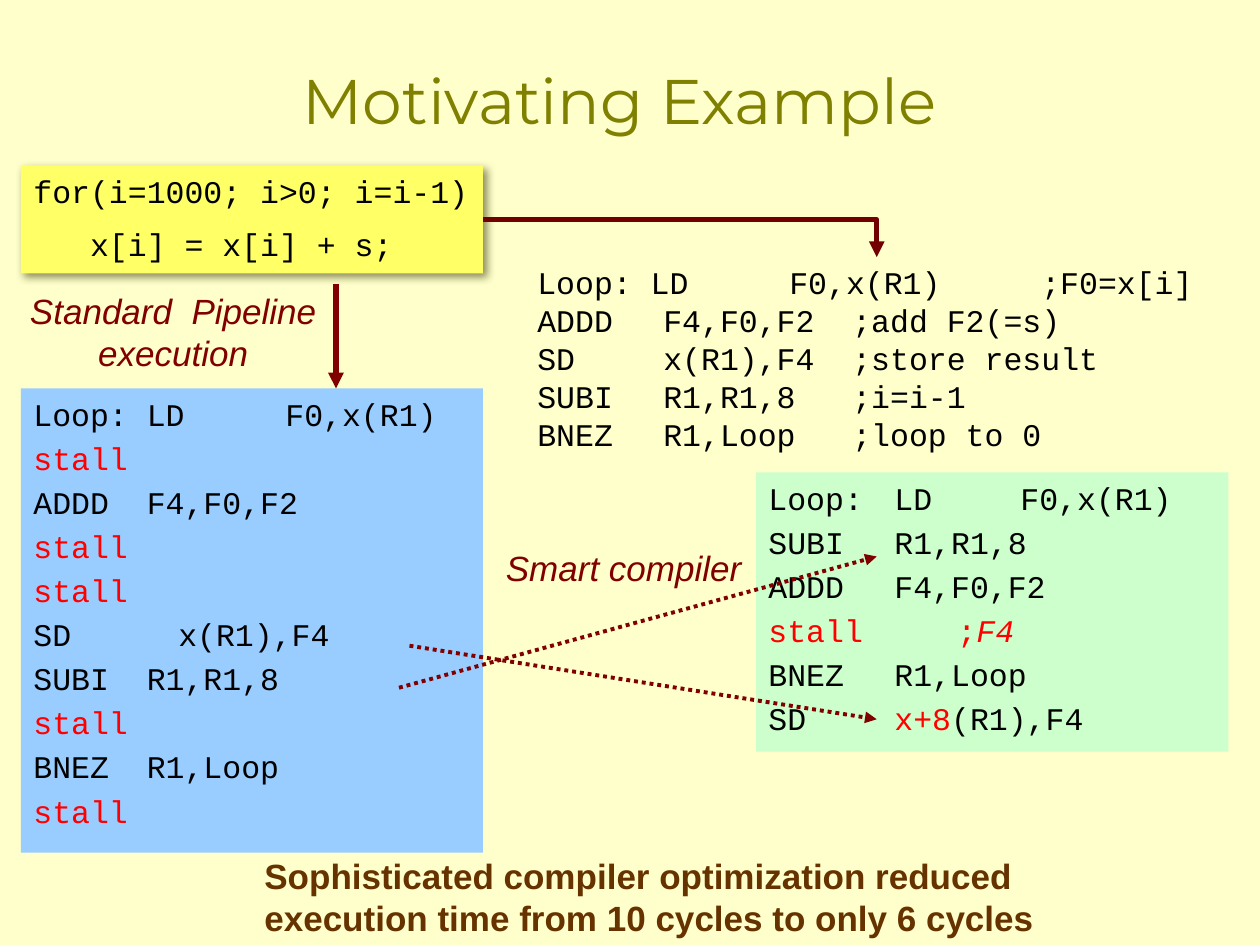
from lxml import etree
from pptx import Presentation
from pptx import util as u
from pptx.dml.color import RGBColor
from pptx.enum import dml, shapes, text
from pptx.oxml.ns import qn

THEME = {
    "page": "FFFFCC", "title": "808000", "ink": "000000", "stall": "FF0000",
    "accent": "800000", "bend": "730000", "closing": "663300",
    "source": "FFFF66", "standard": "99CCFF", "smart": "CCFFCC",
    "shadow": "666633",
    "code_font": "Courier New", "label_font": "Arial", "title_font": "Montserrat",
    "title_size": 36, "code_size": 18, "label_size": 20,
}
COLS, ROWS = 120, 90
TAB_STOPS = (1, 2, 3, 4)

CODE = {"name": THEME["code_font"], "size": THEME["code_size"], "color": THEME["ink"]}
LABEL = {"name": THEME["label_font"], "size": THEME["label_size"],
         "color": THEME["accent"], "italic": True}
CLOSING = {**LABEL, "color": THEME["closing"], "italic": False, "bold": True}
TITLE = {"name": THEME["title_font"], "size": THEME["title_size"], "color": THEME["title"]}
RED = {"color": THEME["stall"]}
STALL = [("stall", RED)]

TITLE_TEXT, TITLE_AT = "Motivating Example", (7, 2, 104, 15)

SOURCE = ["for(i=1000; i>0; i=i-1)", "   x[i] = x[i] + s;"]
ASSEMBLY = [
    "Loop: LD\tF0,x(R1)\t;F0=x[i]",
    "ADDD\tF4,F0,F2  ;add F2(=s)",
    "SD\tx(R1),F4  ;store result",
    "SUBI\tR1,R1,8   ;i=i-1",
    "BNEZ\tR1,Loop   ;loop to 0",
]
STANDARD = [
    "Loop: LD\tF0,x(R1)", STALL, "ADDD  F4,F0,F2", STALL, STALL,
    "SD\t x(R1),F4", "SUBI  R1,R1,8", STALL, "BNEZ  R1,Loop", STALL,
]
SMART = [
    "Loop:\tLD\tF0,x(R1)", "SUBI\tR1,R1,8", "ADDD\tF4,F0,F2",
    [("stall     ;", RED), ("F4", {**RED, "italic": True})],
    "BNEZ\tR1,Loop",
    [("SD\t", {}), ("x+8", RED), ("(R1),F4", {})],
]

BOXES = [
    {"at": (2, 15.75, 44, 10.3), "lines": SOURCE, "style": CODE, "gap": 0.5,
     "fill": THEME["source"], "shadow": True},
    {"at": (0, 27, 33, 9.2), "lines": ["Standard  Pipeline execution"],
     "style": LABEL, "gap": 0.5, "align": text.PP_ALIGN.CENTER},
    {"at": (24, 80.8, 77, 9.2), "style": CLOSING, "gap": 0.5,
     "lines": ["Sophisticated compiler optimization reduced "
               "execution time from 10 cycles to only 6 cycles"]},
    {"at": (50, 24.5, 67, 23), "lines": ASSEMBLY, "style": CODE, "gap": 0},
    {"at": (2, 37, 44, 44.2), "lines": STANDARD, "style": CODE, "gap": 0.2,
     "fill": THEME["standard"]},
    {"at": (72, 45, 45, 26.6), "lines": SMART, "style": CODE, "gap": 0.2,
     "fill": THEME["smart"]},
    {"at": (47, 51.5, 25, 5.2), "lines": ["Smart compiler"], "style": LABEL, "gap": 0.5},
]

SOLID = {"color": THEME["accent"], "width": 3}
DOTTED = {"color": THEME["accent"], "width": 2.25, "dash": dml.MSO_LINE.ROUND_DOT}
BENT = {"color": THEME["bend"], "width": 3, "bent": True}
ARROWS = [
    ((32, 27, 32, 37), SOLID),
    ((46, 20.9, 83.5, 24.5), BENT),
    ((38, 65.5, 83.5, 53), DOTTED),
    ((39, 61.5, 83.5, 68.5), DOTTED),
]

prs = Presentation()
prs.slide_width, prs.slide_height = u.Inches(10), u.Inches(7.5)


def place(at):
    steps = (prs.slide_width / COLS, prs.slide_height / ROWS) * 2
    return [round(value * step) for value, step in zip(at, steps)]


def rgb(value):
    return RGBColor.from_string(value)


def style_font(font, style):
    for key, value in style.items():
        if key == "color":
            font.color.rgb = rgb(value)
        else:
            setattr(font, key, u.Pt(value) if key == "size" else value)


def add_tabs(p):
    tabs = etree.SubElement(p._p.get_or_add_pPr(), qn("a:tabLst"))
    for stop in TAB_STOPS:
        etree.SubElement(tabs, qn("a:tab"), pos=str(u.Inches(stop)), algn="l")


def add_shadow(sp):
    effects = sp._element.spPr.find(qn("a:effectLst"))
    shadow = etree.SubElement(effects, qn("a:outerShdw"), blurRad=str(u.Pt(5)),
                              dist=str(u.Pt(3)), dir="2700000", algn="ctr", rotWithShape="0")
    color = etree.SubElement(shadow, qn("a:srgbClr"), val=THEME["shadow"])
    etree.SubElement(color, qn("a:alpha"), val="75000")


def add_box(s, at, lines, style, gap, fill=None, shadow=False, align=text.PP_ALIGN.LEFT):
    if fill:
        sp = s.shapes.add_shape(shapes.MSO_SHAPE.RECTANGLE, *place(at))
        sp.shadow.inherit = False
        sp.fill.solid()
        sp.fill.fore_color.rgb = rgb(fill)
        sp.line.fill.background()
    else:
        sp = s.shapes.add_textbox(*place(at))
    if shadow:
        add_shadow(sp)
    tf = sp.text_frame
    for key, value in {"word_wrap": True, "vertical_anchor": text.MSO_ANCHOR.TOP,
                       "auto_size": text.MSO_AUTO_SIZE.SHAPE_TO_FIT_TEXT}.items():
        setattr(tf, key, value)
    for i, line in enumerate(lines):
        p = tf.add_paragraph() if i else tf.paragraphs[0]
        p.alignment = align
        p.space_before = u.Pt(gap * style["size"])
        if style is CODE:
            add_tabs(p)
        for words, extra in [(line, {})] if isinstance(line, str) else line:
            r = p.add_run()
            r.text = words
            style_font(r.font, {**style, **extra})


def add_arrow(s, ends, color, width, dash=None, bent=False):
    kind = shapes.MSO_CONNECTOR.ELBOW if bent else shapes.MSO_CONNECTOR.STRAIGHT
    c = s.shapes.add_connector(kind, *place(ends))
    c.line.color.rgb = rgb(color)
    c.line.width = u.Pt(width)
    if dash:
        c.line.dash_style = dash
    spPr = c._element.spPr
    if bent:
        spPr.find(qn("a:prstGeom")).set("prst", "bentConnector2")
    etree.SubElement(c.line._get_or_add_ln(), qn("a:tailEnd"), type="triangle")
    etree.SubElement(spPr, qn("a:effectLst"))


def main():
    s = prs.slides.add_slide(prs.slide_layouts[5])
    s.background.fill.solid()
    s.background.fill.fore_color.rgb = rgb(THEME["page"])
    title = s.shapes.title
    title.left, title.top, title.width, title.height = place(TITLE_AT)
    tf = title.text_frame
    tf.text = TITLE_TEXT
    tf.vertical_anchor = text.MSO_ANCHOR.MIDDLE
    p = tf.paragraphs[0]
    p.alignment = text.PP_ALIGN.CENTER
    style_font(p.runs[0].font, TITLE)
    for box in BOXES:
        add_box(s, **box)
    for ends, look in ARROWS:
        add_arrow(s, ends, **look)
    prs.save("out.pptx")


if __name__ == "__main__":
    main()
